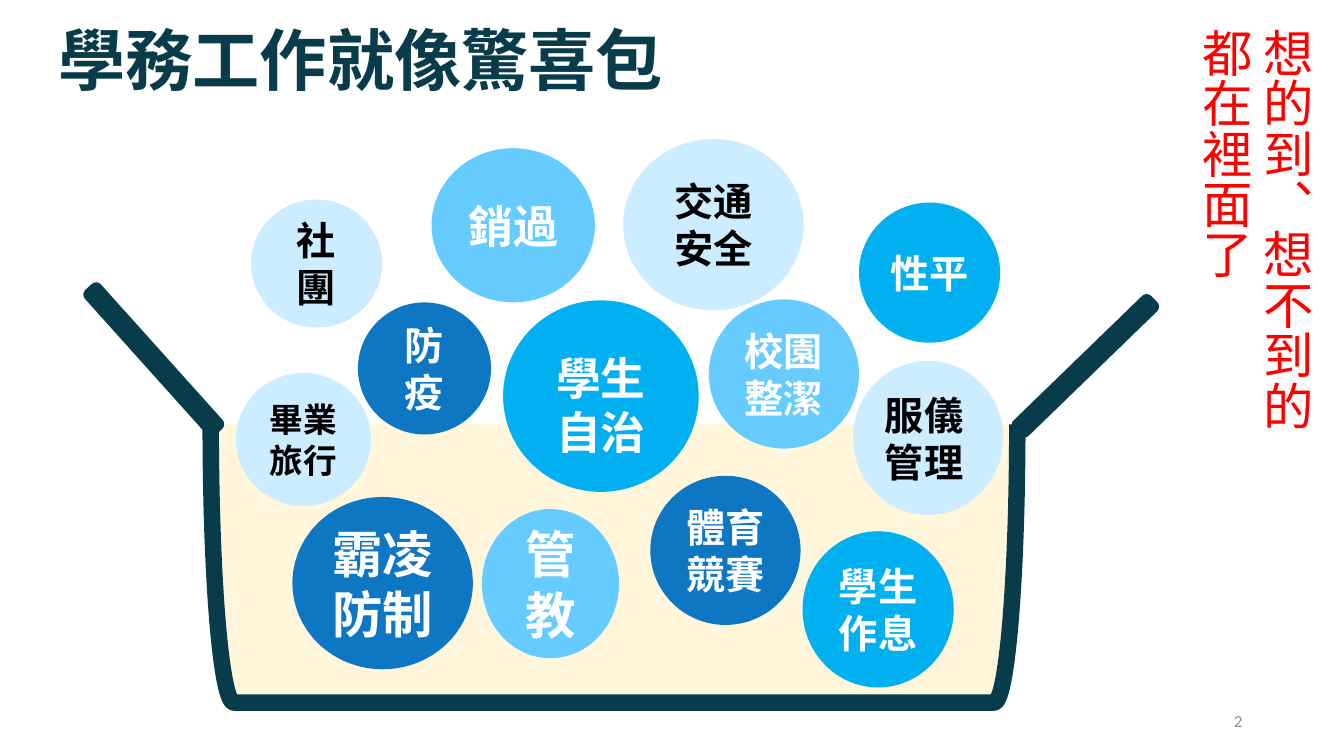
import pptx
import pptx.util
from lxml import etree
from pptx.dml.color import RGBColor
from pptx.enum.shapes import MSO_SHAPE
from pptx.enum.text import MSO_ANCHOR, PP_ALIGN
from pptx.oxml.ns import qn

SLIDE_W, SLIDE_H = 13.33, 7.5
CJK, LATIN = "Noto Sans CJK SC", "Calibri"
COLORS = {
    "dark": "083C4B", "cream": "FFF6DB", "red": "FF0000", "grey": "8C8C8C",
    "pale": "CCECFF", "sky": "66CCFF", "bright": "00B0F0", "deep": "0D77C3",
    "white": "FFFFFF", "black": "000000",
}

TITLE = "學務工作就像驚喜包"
SIDE_LINES = ["想的到、想不到的", "都在裡面了"]
PAGE_NUMBER = "2"

# text, fill, point size, (left, top, width, height)
BALLS = [
    ("交通安全", "pale", 28, (6.18, 1.38, 1.79, 1.7)),
    ("社團", "pale", 28, (2.49, 1.98, 1.3, 1.27)),
    ("銷過", "sky", 32, (4.28, 1.47, 1.62, 1.53)),
    ("校園整潔", "sky", 28, (7.03, 2.97, 1.49, 1.48)),
    ("畢業旅行", "pale", 24, (2.34, 3.7, 1.34, 1.32)),
    ("學生自治", "bright", 32, (4.99, 2.98, 1.94, 1.9)),
    ("防疫", "deep", 28, (3.55, 3, 1.32, 1.31)),
    ("霸凌防制", "deep", 36, (2.9, 4.93, 1.79, 1.71)),
    ("性平", "bright", 28, (8.52, 2.01, 1.4, 1.39)),
    ("服儀管理", "pale", 28, (8.46, 3.58, 1.49, 1.53)),
    ("管教", "sky", 36, (4.78, 5.05, 1.36, 1.48)),
    ("體育競賽", "deep", 28, (6.45, 4.72, 1.49, 1.48)),
    ("學生作息", "bright", 28, (7.96, 5.27, 1.5, 1.55)),
]
LOWERED, LEFT_ALIGNED = "學生自治", "服儀管理"

# (left, top, width, height), rotation
TUB = (4.71, 1.59, 2.76, 8), 270
HANDLES = [((1.46, 2.64, 0.13, 1.85), 318.1), ((10.7, 2.72, 0.13, 1.82), 45.9)]


def rgb(name):
    return RGBColor.from_string(COLORS[name])


def inches(box):
    return [pptx.util.Inches(v) for v in box]


def add_solid(slide, kind, box, fill, line_width=0, rotation=0):
    """Add a shadowless shape, outlined in the dark colour if it has a line."""
    sp = slide.shapes.add_shape(kind, *inches(box))
    sp.shadow.inherit = False
    sp.rotation = rotation
    sp.fill.solid()
    sp.fill.fore_color.rgb = rgb(fill)
    if line_width:
        sp.line.color.rgb = rgb("dark")
        sp.line.width = pptx.util.Pt(line_width)
    else:
        sp.line.fill.background()
    return sp


def write(tf, lines, size, color, font=CJK, bold=False, align=PP_ALIGN.LEFT):
    tf.word_wrap = True
    for i, line in enumerate(lines):
        p = tf.add_paragraph() if i else tf.paragraphs[0]
        p.text = line
        p.alignment = align
        p.font.size = pptx.util.Pt(size)
        p.font.bold = bold
        p.font.color.rgb = rgb(color)
        p.font.name = font
        defaults = p._p.pPr.find(qn("a:defRPr"))
        etree.SubElement(defaults, qn("a:ea")).set("typeface", font)


def add_text(slide, box, lines, size, color, **style):
    tf = slide.shapes.add_textbox(*inches(box)).text_frame
    write(tf, lines, size, color, **style)
    return tf


def add_ball(slide, text, fill, size, box):
    tf = add_solid(slide, MSO_SHAPE.OVAL, box, fill).text_frame
    tf.vertical_anchor = MSO_ANCHOR.MIDDLE
    if text == LOWERED:
        tf.margin_top = pptx.util.Inches(0.22)
    write(tf, [text], size, "black" if fill == "pale" else "white", bold=True,
          align=PP_ALIGN.LEFT if text == LEFT_ALIGNED else PP_ALIGN.CENTER)


def main():
    prs = pptx.Presentation()
    prs.slide_width, prs.slide_height = inches((SLIDE_W, SLIDE_H))
    slide = prs.slides.add_slide(prs.slide_layouts[6])

    title = add_text(slide, (0.48, 0.22, 6.24, 1.06), [TITLE], 48, "dark", bold=True)
    title.paragraphs[0].line_spacing = 0.9
    side = add_text(slide, (11.7, 0.18, 1.41, 4.63), SIDE_LINES, 36, "red")
    side._txBody.bodyPr.set("vert", "eaVert")

    box, rotation = TUB
    add_solid(slide, MSO_SHAPE.LEFT_BRACKET, box, "cream", 11.75, rotation)
    for ball in BALLS:
        add_ball(slide, *ball)
    for box, rotation in HANDLES:
        add_solid(slide, MSO_SHAPE.ROUNDED_RECTANGLE, box, "dark", 6, rotation)

    number = add_text(slide, (9.42, 6.95, 3, 0.4), [PAGE_NUMBER], 12, "grey",
                      font=LATIN, align=PP_ALIGN.RIGHT)
    number.vertical_anchor = MSO_ANCHOR.MIDDLE
    prs.save("out.pptx")


if __name__ == "__main__":
    main()
